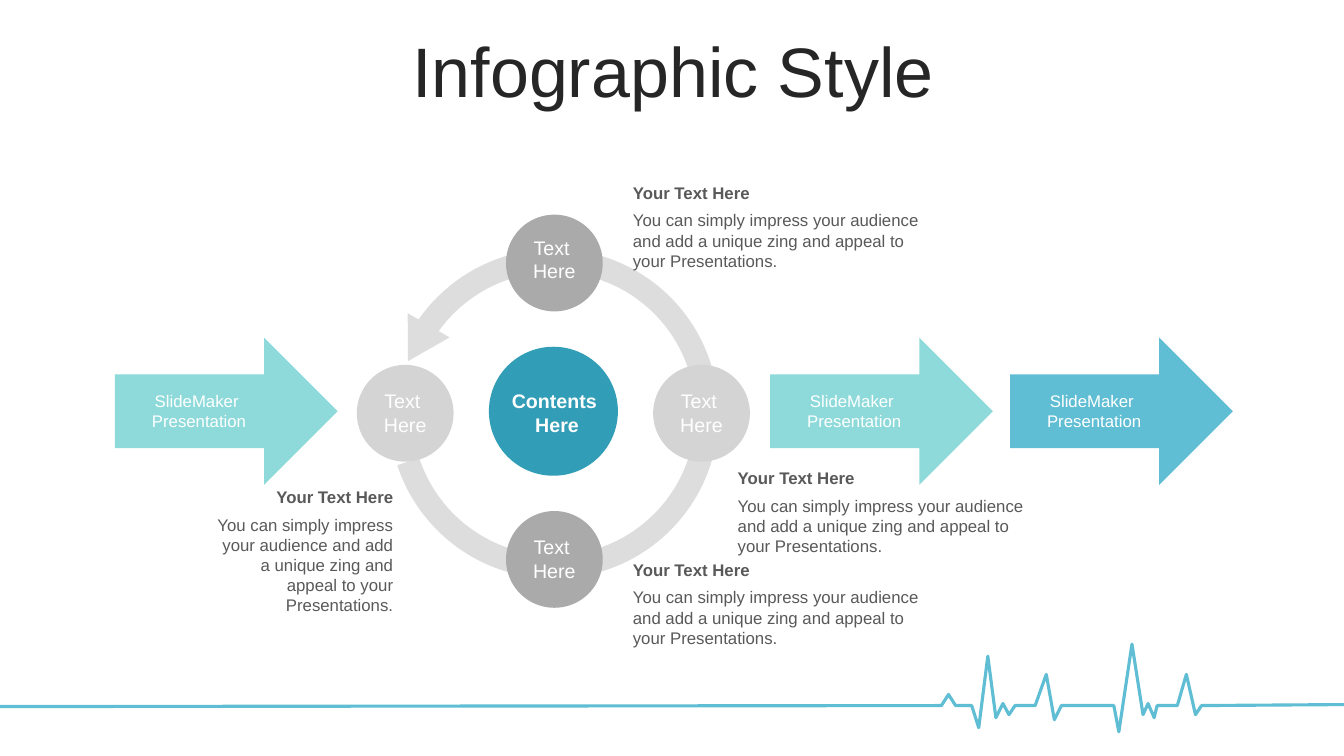
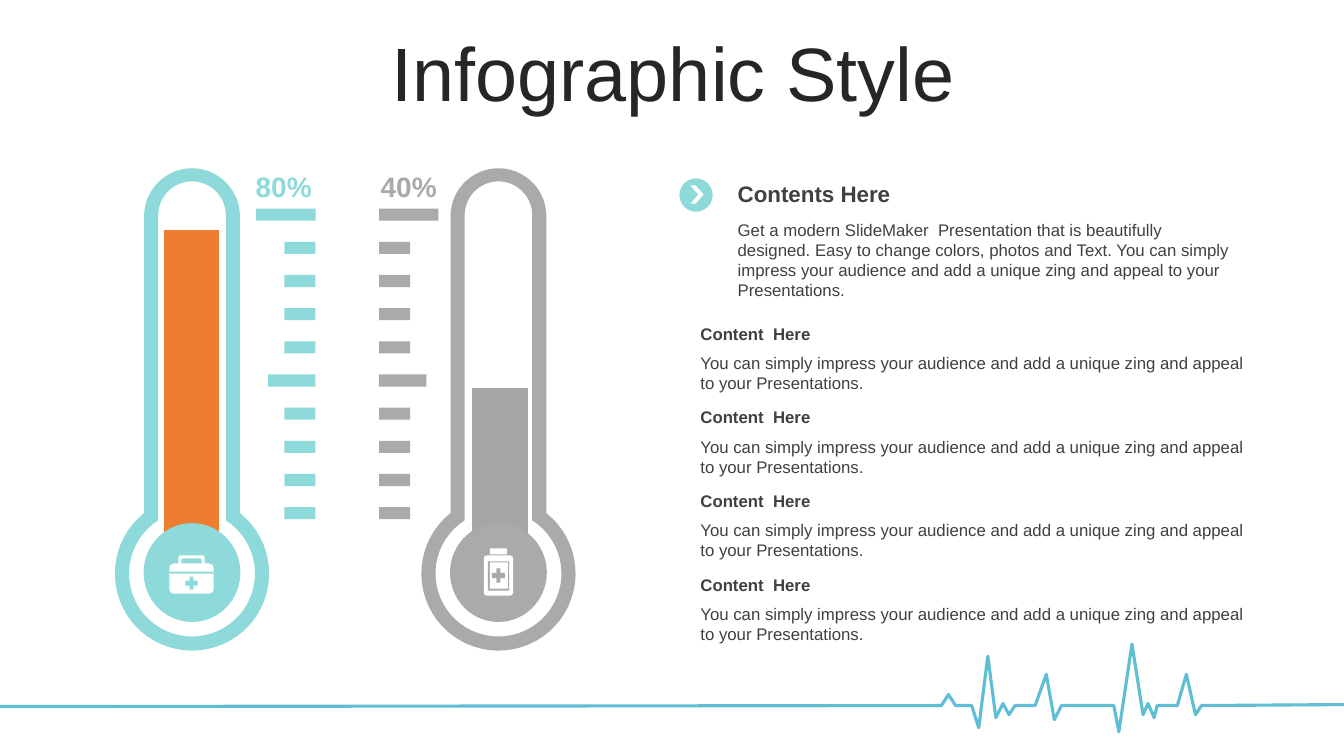
"""Build two medical infographic slides on a grid of tenth-inch cells."""
from dataclasses import dataclass
from math import asin, cos, pi, sin, sqrt
from typing import NamedTuple

from lxml import etree
from pptx import Presentation
from pptx.chart.data import CategoryChartData
from pptx.dml.color import RGBColor
from pptx.enum.chart import XL_CHART_TYPE
from pptx.enum.shapes import MSO_SHAPE
from pptx.enum.text import MSO_ANCHOR, PP_ALIGN
from pptx.oxml.ns import qn
from pptx.shapes.autoshape import Shape
from pptx.slide import Slide
from pptx.util import Inches, Pt

COLS, ROWS = 133.33, 75
CELL = Inches(0.1)
FONT = "Arial"
CHART_FONT = "Calibri"

WHITE = RGBColor(0xFF, 0xFF, 0xFF)
BLACK = RGBColor(0x00, 0x00, 0x00)
INK = RGBColor(0x26, 0x26, 0x26)
DARK = RGBColor(0x40, 0x40, 0x40)
SLATE = RGBColor(0x59, 0x59, 0x59)
GRAY = RGBColor(0xAA, 0xAA, 0xAA)
SILVER = RGBColor(0xD4, 0xD4, 0xD4)
PALE = RGBColor(0xDD, 0xDD, 0xDD)
MINT = RGBColor(0x8E, 0xDA, 0xDA)
SKY = RGBColor(0x60, 0xBE, 0xD4)
TEAL = RGBColor(0x31, 0x9D, 0xB6)
ORANGE = RGBColor(0xED, 0x7D, 0x31)
STEEL = RGBColor(0xA5, 0xA5, 0xA5)

LEFT, MID, RIGHT = PP_ALIGN.LEFT, PP_ALIGN.CENTER, PP_ALIGN.RIGHT
TOP, MIDDLE = MSO_ANCHOR.TOP, MSO_ANCHOR.MIDDLE
RECT, ROUND, OVAL = MSO_SHAPE.RECTANGLE, MSO_SHAPE.ROUNDED_RECTANGLE, MSO_SHAPE.OVAL
ARROW, ARC = MSO_SHAPE.RIGHT_ARROW, MSO_SHAPE.BLOCK_ARC
WEDGE, CROSS = MSO_SHAPE.ISOSCELES_TRIANGLE, MSO_SHAPE.CROSS
CHEVRON = MSO_SHAPE.CHEVRON
COLUMN = XL_CHART_TYPE.COLUMN_CLUSTERED

PITCH = ("You can simply impress your audience and add a unique zing "
         "and appeal to your Presentations.")
INTRO = ("Get a modern SlideMaker  Presentation that is beautifully designed. "
         "Easy to change colors, photos and Text. " + PITCH)

Point = tuple[float, float]
PULSE: list[Point] = [
    (COLS, 69.9), (119.2, 70), (118.6, 70.9), (117.7, 66.9), (116.8, 70),
    (114.8, 70), (114.5, 71.2), (113.9, 69.8), (113.4, 70.9), (112.3, 63.9),
    (111, 72.6), (110.5, 70), (105.3, 70), (104.6, 71.4), (103.8, 66.9),
    (102.7, 70), (100.7, 70), (100.1, 70.9), (99.5, 69.8), (98.8, 71.2),
    (98, 65.1), (97.1, 72.2), (96.4, 70), (94.8, 70), (94.1, 68.9),
    (93.4, 70), (0, 70.1)]


class Box(NamedTuple):
    """Place and size in grid cells."""
    left: float
    top: float
    width: float
    height: float


@dataclass(frozen=True)
class Step:
    """One block arrow of the process."""
    left: float
    color: RGBColor


@dataclass(frozen=True)
class Node:
    """One labelled circle of the cycle."""
    left: float
    top: float
    color: RGBColor
    drop: float


@dataclass(frozen=True)
class Note:
    """One heading with a paragraph below it."""
    left: float
    top: float
    width: float
    align: PP_ALIGN = LEFT


@dataclass(frozen=True)
class Gauge:
    """One thermometer with its scale and share."""
    mid: float
    color: RGBColor
    share: str
    label: Box
    edge: float
    flip: bool


STEPS = [Step(11.4, MINT), Step(76.4, MINT), Step(100.2, SKY)]
NODES = [Node(35.4, 36.2, SILVER, 1.9), Node(50.2, 50.7, GRAY, 1.9),
         Node(64.8, 36.2, SILVER, 1.9), Node(50.2, 21.3, GRAY, 1.6)]
NOTES = [Note(61.8, 17.6, 32.1), Note(72.2, 45.9, 32.1),
         Note(61.8, 55, 32.1), Note(20.1, 47.8, 19.9, RIGHT)]
GAUGES = [Gauge(19.05, MINT, "80%", Box(23, 16.3, 10.3, 4.4), 31.3, True),
          Gauge(49.45, GRAY, "40%", Box(35.6, 16.3, 9.9, 4.4), 37.6, False)]


def emu(box: Box) -> list[int]:
    """Turn cells into slide units."""
    return [round(n * CELL) for n in box]


def put(slide: Slide, box: Box, *lines: str, size: float = 12,
        color: RGBColor = DARK, bold: bool = False, align: PP_ALIGN = LEFT,
        anchor: MSO_ANCHOR = TOP, pitch: float = 1, before: float = 0) -> None:
    """Write lines of text in one format."""
    frame = slide.shapes.add_textbox(*emu(box)).text_frame
    frame.word_wrap = True
    frame.vertical_anchor = anchor
    for i, line in enumerate(lines):
        para = frame.add_paragraph() if i else frame.paragraphs[0]
        para.alignment = align
        para.line_spacing = pitch
        para.space_before = Pt(before)
        run = para.add_run()
        run.text = line
        run.font.name = FONT
        run.font.size = Pt(size)
        run.font.bold = bold
        run.font.color.rgb = color


def paint(shape: Shape, color: RGBColor) -> Shape:
    """Give a shape a flat fill without line or shadow."""
    shape.shadow.inherit = False
    shape.fill.solid()
    shape.fill.fore_color.rgb = color
    shape.line.fill.background()
    return shape


def draw(slide: Slide, kind: MSO_SHAPE, box: Box, color: RGBColor,
         *marks: float, turn: float = 0) -> None:
    """Add a flat preset shape."""
    shape = paint(slide.shapes.add_shape(kind, *emu(box)), color)
    shape.rotation = turn
    for i, mark in enumerate(marks):
        shape.adjustments[i] = mark


def trace(slide: Slide, *rings: list[Point], close: bool = True) -> Shape:
    """Join points into one outline of one or more rings."""
    loops = [[(round(x * CELL), round(y * CELL)) for x, y in ring]
             for ring in rings]
    pen = slide.shapes.build_freeform(*loops[0][0])
    for i, loop in enumerate(loops):
        if i:
            pen.move_to(*loop[0])
        pen.add_line_segments(loop[1:], close=close)
    return pen.convert_to_shape()


def start(deck: Presentation, size: float, pitch: float) -> Slide:
    """Add a slide with the shared pulse line and title."""
    slide = deck.slides.add_slide(deck.slide_layouts[6])
    line = trace(slide, PULSE, close=False)
    line.shadow.inherit = False
    line.fill.background()
    line.line.color.rgb = SKY
    line.line.width = Pt(2.25)
    put(slide, Box(3.5, 3.7, 126.6, 7.9), "Infographic Style", size=size,
        color=INK, align=MID, anchor=MIDDLE, pitch=pitch, before=10)
    return slide


def tell(slide: Slide, note: Note, head: str, color: RGBColor,
         drop: float, height: float) -> None:
    """Write a heading and its paragraph."""
    put(slide, Box(note.left, note.top + drop, note.width, height), PITCH,
        color=color, align=note.align)
    put(slide, Box(note.left, note.top, note.width, 3), head,
        color=color, bold=True, align=note.align)


def cycle(slide: Slide) -> None:
    """Draw the process arrows and the ring of circles."""
    for step in STEPS:
        draw(slide, ARROW, Box(step.left, 33.5, 22.1, 14.6), step.color)
        put(slide, Box(step.left + 2.3, 38.3, 12.1, 5), "SlideMaker ",
            "Presentation", color=WHITE, align=MID)
    draw(slide, ARC, Box(38.6, 24.7, 32.7, 32.7), PALE, 128.35, 97.08, 0.07)
    draw(slide, WEDGE, Box(39.1, 32, 4.8, 4.1), PALE, turn=210)
    for node in NODES:
        draw(slide, OVAL, Box(node.left, node.top, 9.6, 9.6), node.color)
        put(slide, Box(node.left + 0.8, node.top + node.drop, 8, 5.7),
            "Text ", "Here", size=14, color=WHITE, align=MID)
    draw(slide, OVAL, Box(48.5, 34.4, 12.8, 12.8), TEAL)
    put(slide, Box(49, 38.1, 12, 5.7), "Contents", " Here", size=14,
        color=WHITE, bold=True, align=MID)
    for note in NOTES:
        tell(slide, note, "Your Text Here", SLATE, 2.75, 7.1)


def plot(slide: Slide) -> None:
    """Chart the two fill levels."""
    data = CategoryChartData()
    data.categories = ["1", "2"]
    data.add_series("Series 1", [100, 50])
    box = Box(2.4, 18, 63.8, 36.9)
    chart = slide.shapes.add_chart(COLUMN, *emu(box), data).chart
    chart.has_legend = chart.has_title = False
    chart.font.name = CHART_FONT
    chart.font.size = Pt(18)
    chart.font.color.rgb = BLACK
    chart.value_axis.minimum_scale = 0
    chart.value_axis.maximum_scale = 100
    for axis in (chart.value_axis, chart.category_axis):
        axis.has_major_gridlines = False
        axis.visible = False
    bars = chart.plots[0]
    bars.gap_width = 460
    bars.vary_by_categories = False
    for i, color in enumerate((ORANGE, STEEL)):
        fill = bars.series[0].points[i].format.fill
        fill.solid()
        fill.fore_color.rgb = color
    area = chart.element.find(".//" + qn("c:plotArea"))
    for old in area.findall(qn("c:layout")):
        area.remove(old)
    layout = etree.Element(qn("c:layout"))
    area.insert(0, layout)
    manual = etree.SubElement(layout, qn("c:manualLayout"))
    parts = {"layoutTarget": "inner", "xMode": "edge", "yMode": "edge",
             "x": "0.02", "y": "0.13", "w": "0.96", "h": "0.85"}
    for name, value in parts.items():
        etree.SubElement(manual, qn("c:" + name)).set("val", value)


def tube(mid: float, half: float, top: float, bulb: float) -> list[Point]:
    """Trace a round-topped tube that ends in a bulb."""
    count, base = 48, 56.9
    neck = asin(half / bulb)
    dome = [(mid - half * cos(pi * i / count),
             top + half - half * sin(pi * i / count))
            for i in range(count + 1)]
    turns = [neck + (2 * pi - 2 * neck) * i / count for i in range(count + 1)]
    ball = [(mid + bulb * sin(a), base - bulb * cos(a)) for a in turns]
    return dome + [(mid + half, base - sqrt(bulb ** 2 - half ** 2))] + ball


def gauge(slide: Slide, item: Gauge) -> None:
    """Draw a thermometer, its share and its scale."""
    paint(trace(slide, tube(item.mid, 4.75, 16.7, 7.65),
                tube(item.mid, 3.35, 18, 6.25)), item.color)
    draw(slide, OVAL, Box(item.mid - 4.8, 51.9, 9.6, 9.8), item.color)
    put(slide, item.label, item.share, size=20, color=item.color,
        bold=True, align=MID)
    for i in range(10):
        width = {0: 5.9, 5: 4.7}.get(i, 3.1)
        left = item.edge - width if item.flip else item.edge
        draw(slide, RECT, Box(left, 20.7 + 3.29 * i, width, 1.2), item.color)


def icons(slide: Slide) -> None:
    """Draw the first-aid kit and the pill bottle."""
    draw(slide, ROUND, Box(17.7, 55.1, 2.6, 1.4), WHITE, 0.15)
    draw(slide, ROUND, Box(18, 55.4, 2, 1), MINT, 0.2)
    draw(slide, ROUND, Box(16.8, 55.9, 4.4, 3), WHITE, 0.16)
    draw(slide, RECT, Box(16.8, 56.7, 4.4, 0.2), MINT)
    draw(slide, CROSS, Box(18.4, 57.2, 1.2, 1.3), MINT, 0.34)
    draw(slide, ROUND, Box(48.6, 54.4, 1.7, 0.6), WHITE, 0.1)
    draw(slide, ROUND, Box(48, 55.1, 2.9, 4), WHITE, 0.11)
    draw(slide, RECT, Box(48.4, 55.7, 2.1, 2.9), GRAY)
    draw(slide, RECT, Box(48.6, 55.8, 1.8, 2.6), WHITE)
    draw(slide, CROSS, Box(48.8, 56.4, 1.3, 1.4), GRAY, 0.34)


def levels(slide: Slide) -> None:
    """Draw the thermometers and the text beside them."""
    plot(slide)
    for item in GAUGES:
        gauge(slide, item)
    icons(slide)
    for i in range(4):
        tell(slide, Note(68.5, 31.6 + 8.3 * i, 56.8), "Content  Here",
             DARK, 2.9, 5)
    draw(slide, OVAL, Box(67.4, 17.7, 3.3, 3.3), MINT)
    draw(slide, CHEVRON, Box(68.5, 18.4, 1.3, 1.8), WHITE, 0.6)
    put(slide, Box(72.2, 17.4, 51.4, 3.7), "Contents Here", size=16,
        bold=True, anchor=MIDDLE)
    put(slide, Box(72.2, 21.3, 51.4, 9.1), INTRO)


def main() -> None:
    """Build and save the deck."""
    deck = Presentation()
    deck.slide_width, deck.slide_height = round(COLS * CELL), ROWS * CELL
    cycle(start(deck, 50, 0.8))
    levels(start(deck, 54, 0.9))
    deck.save("out.pptx")


if __name__ == "__main__":
    main()
